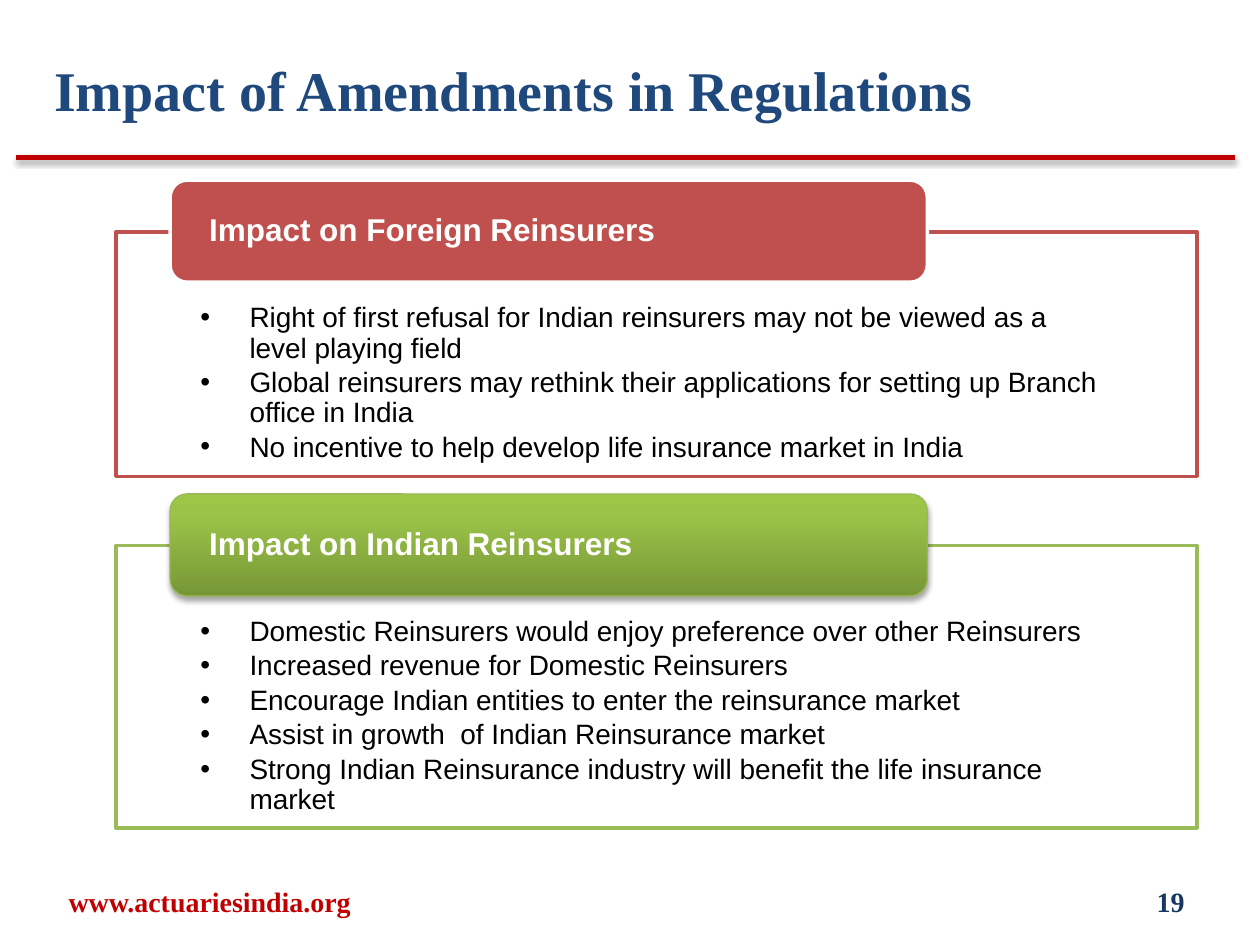
"""Build the slide on the impact of amendments in reinsurance regulations."""
import copy
import pptx
import pptx.dml.color
import pptx.enum.dml
import pptx.enum.shapes
import pptx.enum.text
import pptx.oxml
import pptx.oxml.ns
import pptx.util

RGBColor = pptx.dml.color.RGBColor
Pt = pptx.util.Pt
PP_ALIGN = pptx.enum.text.PP_ALIGN
ANCHOR = pptx.enum.text.MSO_ANCHOR
PX = 9144

WHITE = RGBColor(0xFF, 0xFF, 0xFF)
BLACK = RGBColor(0x00, 0x00, 0x00)
RED = RGBColor(0xC0, 0x00, 0x00)
NAVY = RGBColor(0x17, 0x37, 0x5E)
BLUE = RGBColor(0x1F, 0x49, 0x7D)
BRICK = RGBColor(0xC0, 0x50, 0x4D)
GREEN = RGBColor(0x9B, 0xBB, 0x59)
GREEN_EDGE = RGBColor(0x98, 0xB9, 0x55)
GREEN_DARK = RGBColor(0x77, 0x97, 0x37)
GREEN_MID = RGBColor(0x9B, 0xC3, 0x48)
GREEN_LIGHT = RGBColor(0x9D, 0xC7, 0x46)


def add_run(p, text, size, font, color, bold=True):
    r = p.add_run()
    r.text = text
    r.font.size = Pt(size)
    r.font.name = font
    r.font.bold = bold
    r.font.color.rgb = color


def add_shadow(sp, distance, alpha):
    sp._element.spPr.append(pptx.oxml.parse_xml(
        f'<a:effectLst {pptx.oxml.ns.nsdecls("a")}>'
        f'<a:outerShdw blurRad="40000" dist="{distance}" dir="5400000" rotWithShape="0">'
        f'<a:srgbClr val="000000"><a:alpha val="{alpha}"/></a:srgbClr>'
        '</a:outerShdw></a:effectLst>'))


prs = pptx.Presentation()
prs.slide_width, prs.slide_height = 1000 * PX, 750 * PX
s = prs.slides.add_slide(prs.slide_layouts[3])

title = s.shapes.title
title.left, title.top, title.width, title.height = 33 * PX, 39 * PX, 767 * PX, 67 * PX
tf = title.text_frame
tf.auto_size = pptx.enum.text.MSO_AUTO_SIZE.NONE
tf.vertical_anchor = ANCHOR.TOP
p = tf.paragraphs[0]
p.alignment = PP_ALIGN.LEFT
add_run(p, "Impact of Amendments in Regulations", 32, "Times New Roman", BLUE)

rule = s.shapes.add_connector(
    pptx.enum.shapes.MSO_CONNECTOR.STRAIGHT, 13 * PX, 125 * PX, 980 * PX, 125 * PX)
rule.line.color.rgb = RED
rule.line.width = Pt(3)
add_shadow(rule, 20000, 38000)

sections = [
    (1, 184, 194, BRICK, "Impact on Foreign Reinsurers", [
        "Right of first refusal for Indian reinsurers may not be viewed as a level playing field",
        "Global reinsurers may rethink their applications for setting up Branch office in India",
        "No incentive to help develop life insurance market in India"]),
    (2, 433, 224, GREEN, "Impact on Indian Reinsurers", [
        "Domestic Reinsurers would enjoy preference over other Reinsurers",
        "Increased revenue for Domestic Reinsurers",
        "Encourage Indian entities to enter the reinsurance market",
        "Assist in growth  of Indian Reinsurance market",
        "Strong Indian Reinsurance industry will benefit the life insurance market"]),
]
for idx, top, height, color, heading, points in sections:
    body = s.placeholders[idx]
    body.left, body.top, body.width, body.height = 92 * PX, top * PX, 858 * PX, height * PX
    body.fill.solid()
    body.fill.fore_color.rgb = WHITE
    body.line.color.rgb = color
    body.line.width = Pt(2)
    tf = body.text_frame
    tf.auto_size = pptx.enum.text.MSO_AUTO_SIZE.NONE
    tf.margin_left = tf.margin_right = 67 * PX
    tf.margin_top, tf.margin_bottom = 57 * PX, 12 * PX
    for i, point in enumerate(points):
        p = tf.add_paragraph() if i else tf.paragraphs[0]
        pPr = p._p.get_or_add_pPr()
        pPr.set("marL", str(39 * PX))
        pPr.set("indent", str(-39 * PX))
        p.line_spacing = 0.9
        p.space_before = Pt(0)
        p.space_after = Pt(2.4)
        add_run(p, point, 16, "Arial", BLACK, False)

    header = s.shapes.add_shape(
        pptx.enum.shapes.MSO_SHAPE.ROUNDED_RECTANGLE,
        135 * PX, (top - 41) * PX, 601 * PX, 81 * PX)
    if color == GREEN:
        header.fill.gradient()
        header.fill.gradient_angle = 90
        stops = header.fill.gradient_stops
        stops[0].color.rgb, stops[0].position = GREEN_DARK, 0
        stops[1].color.rgb, stops[1].position = GREEN_MID, 0.8
        gs = stops[1]._gs
        gs.addnext(copy.deepcopy(gs))
        light = header.fill.gradient_stops[2]
        light.color.rgb, light.position = GREEN_LIGHT, 1
        header.line.color.rgb = GREEN_EDGE
        header.line.width = Pt(0.75)
        add_shadow(header, 23000, 35000)
    else:
        header.shadow.inherit = False
        header.fill.solid()
        header.fill.fore_color.rgb = color
        header.line.color.rgb = WHITE
        header.line.width = Pt(2)
    tf = header.text_frame
    tf.word_wrap = True
    tf.vertical_anchor = ANCHOR.MIDDLE
    tf.margin_left = tf.margin_right = 27 * PX
    tf.margin_top = tf.margin_bottom = 0
    p = tf.paragraphs[0]
    p.alignment = PP_ALIGN.LEFT
    p.line_spacing = 0.9
    add_run(p, heading, 18, "Arial", WHITE)

for left, width, align, text, color in [
        (8, 317, PP_ALIGN.CENTER, "www.actuariesindia.org", RED),
        (717, 233, PP_ALIGN.RIGHT, "19", NAVY)]:
    footer = s.shapes.add_textbox(left * PX, 695 * PX, width * PX, 40 * PX)
    tf = footer.text_frame
    tf.word_wrap = True
    tf.vertical_anchor = ANCHOR.MIDDLE
    p = tf.paragraphs[0]
    p.alignment = align
    add_run(p, text, 16, "Times New Roman", color)

prs.save("out.pptx")
